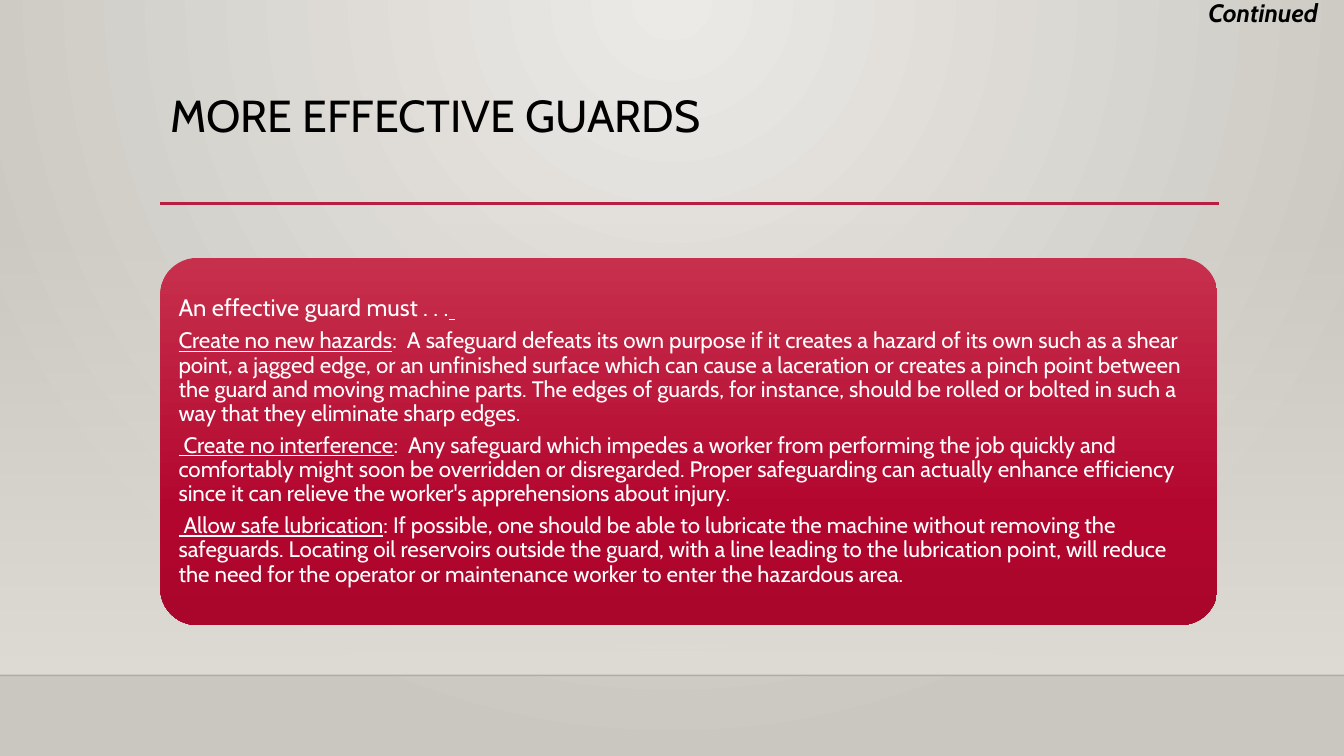
from dataclasses import dataclass

from pptx import Presentation
from pptx import oxml
from pptx.dml.color import RGBColor
from pptx.enum import shapes, text
from pptx.oxml import ns
from pptx.util import Cm, Pt


@dataclass(frozen=True)
class Theme:
    font: str = "Cabin"
    space_font: str = "Arial"
    ink: str = "000000"
    paper: str = "FFFFFF"
    accent: str = "B71E42"
    background: tuple = ((0, "ECEAE7", 100), (100, "CAC7C1", 100))
    wall: tuple = ((0, "DFDBD5", 0), (100, "DFDBD5", 100))
    card: tuple = ((0, "C7304C", 100), (69, "B3062F", 100), (100, "AA062C", 100))
    title_size: int = 32
    note_size: int = 18
    lead_size: int = 17
    body_size: int = 16


THEME = Theme()
WIDTH, HEIGHT = Cm(33.87), Cm(19.05)
LEFT = Cm(4.04)
FLOOR = Cm(17.02)
LEAD = "An effective guard must . . ."
RULES = [
    ("Create no new hazards",
     ":  A safeguard defeats its own purpose if it creates a hazard of its own such as a "
     "shear point, a jagged edge, or an unfinished surface which can cause a laceration or "
     "creates a pinch point between the guard and moving machine parts. The edges of guards, "
     "for instance, should be rolled or bolted in such a way that they eliminate sharp edges."),
    (" Create no interference",
     ":  Any safeguard which impedes a worker from performing the job quickly and comfortably "
     "might soon be overridden or disregarded. Proper safeguarding can actually enhance "
     "efficiency since it can relieve the worker's apprehensions about injury."),
    (" Allow safe lubrication",
     ": If possible, one should be able to lubricate the machine without removing the "
     "safeguards. Locating oil reservoirs outside the guard, with a line leading to the "
     "lubrication point, will reduce the need for the operator or maintenance worker to enter "
     "the hazardous area."),
]
DOWNWARD = '<a:lin ang="5400000" scaled="0"/>'
FROM_TOP = '<a:path path="circle"><a:fillToRect l="43000" t="0" r="43000" b="100000"/></a:path>'


def gradient(stops, direction):
    """Return a gradient fill; each stop is position, colour and opacity in percent."""
    stop_list = "".join(
        f'<a:gs pos="{position * 1000}"><a:srgbClr val="{colour}">'
        f'<a:alpha val="{opacity * 1000}"/></a:srgbClr></a:gs>'
        for position, colour, opacity in stops)
    return oxml.parse_xml(f'<a:gradFill {ns.nsdecls("a")} rotWithShape="1">'
                          f'<a:gsLst>{stop_list}</a:gsLst>{direction}</a:gradFill>')


def paint_background(slide):
    slide.background.fill.solid()
    properties = slide.element.find(".//" + ns.qn("p:bgPr"))
    properties.replace(properties[0], gradient(THEME.background, FROM_TOP))


def add_panel(slide, kind, box, stops):
    shape = slide.shapes.add_shape(kind, *box)
    shape.shadow.inherit = False
    shape.line.fill.background()
    geometry = shape.element.spPr.find(ns.qn("a:prstGeom"))
    geometry.addnext(gradient(stops, DOWNWARD))
    return shape


def add_rule(slide, left, right, top, colour, width, opacity=100):
    line = slide.shapes.add_connector(shapes.MSO_CONNECTOR.STRAIGHT, left, top, right, top)
    line.line.color.rgb = RGBColor.from_string(colour)
    line.line.width = Pt(width)
    properties = line.element.spPr
    if opacity < 100:
        alpha = oxml.parse_xml(f'<a:alpha {ns.nsdecls("a")} val="{opacity * 1000}"/>')
        properties.find(".//" + ns.qn("a:srgbClr")).append(alpha)
    properties.append(oxml.parse_xml(f'<a:effectLst {ns.nsdecls("a")}/>'))


def add_text_box(slide, box):
    frame = slide.shapes.add_textbox(*box).text_frame
    frame.word_wrap = True
    return frame


def style(font, size, colour, name=THEME.font):
    font.name = name
    font.size = Pt(size)
    font.color.rgb = RGBColor.from_string(colour)


def add_run(paragraph, words, size, underline=False, name=THEME.font):
    run = paragraph.add_run()
    run.text = words
    style(run.font, size, THEME.paper, name)
    run.font.underline = underline


def add_title(slide, words):
    frame = add_text_box(slide, (LEFT, Cm(2.24), Cm(26.67), Cm(2.92)))
    frame.text = words
    paragraph = frame.paragraphs[0]
    paragraph.line_spacing = 0.9
    style(paragraph.runs[0].font, THEME.title_size, THEME.ink)


def add_note(slide, words):
    frame = add_text_box(slide, (Cm(30.2), Cm(-0.18), Cm(3.66), Cm(1.02)))
    frame.text = words
    font = frame.paragraphs[0].runs[0].font
    style(font, THEME.note_size, THEME.ink)
    font.bold = font.italic = True


def add_guard_rules(slide):
    frame = add_text_box(slide, (Cm(4.32), Cm(6.78), Cm(26.11), Cm(8.69)))
    frame.vertical_anchor = text.MSO_ANCHOR.MIDDLE
    frame.margin_left = frame.margin_right = Cm(0.18)
    frame.margin_top = frame.margin_bottom = Cm(0.18)
    lead = frame.paragraphs[0]
    add_run(lead, LEAD, THEME.lead_size)
    add_run(lead, " ", THEME.lead_size, underline=True, name=THEME.space_font)
    for heading, explanation in RULES:
        paragraph = frame.add_paragraph()
        add_run(paragraph, heading, THEME.body_size, underline=True)
        add_run(paragraph, explanation, THEME.body_size)
    for paragraph in frame.paragraphs:
        paragraph.line_spacing = 0.9
        paragraph.space_after = Pt(5.6)


def main():
    presentation = Presentation()
    presentation.slide_width, presentation.slide_height = WIDTH, HEIGHT
    slide = presentation.slides.add_slide(presentation.slide_layouts[6])
    paint_background(slide)
    wall_top = Cm(5.61)
    add_panel(slide, shapes.MSO_SHAPE.RECTANGLE,
              (0, wall_top, WIDTH, FLOOR - wall_top), THEME.wall)
    add_rule(slide, 0, WIDTH, FLOOR, THEME.ink, 1, opacity=20)
    add_rule(slide, LEFT, Cm(30.73), Cm(5.13), THEME.accent, 2.5)
    add_title(slide, "MORE EFFECTIVE GUARDS")
    card = add_panel(slide, shapes.MSO_SHAPE.ROUNDED_RECTANGLE,
                     (LEFT, Cm(6.5), Cm(26.64), Cm(9.25)), THEME.card)
    card.adjustments[0] = 0.1
    add_guard_rules(slide)
    add_note(slide, "Continued")
    presentation.save("out.pptx")


if __name__ == "__main__":
    main()
